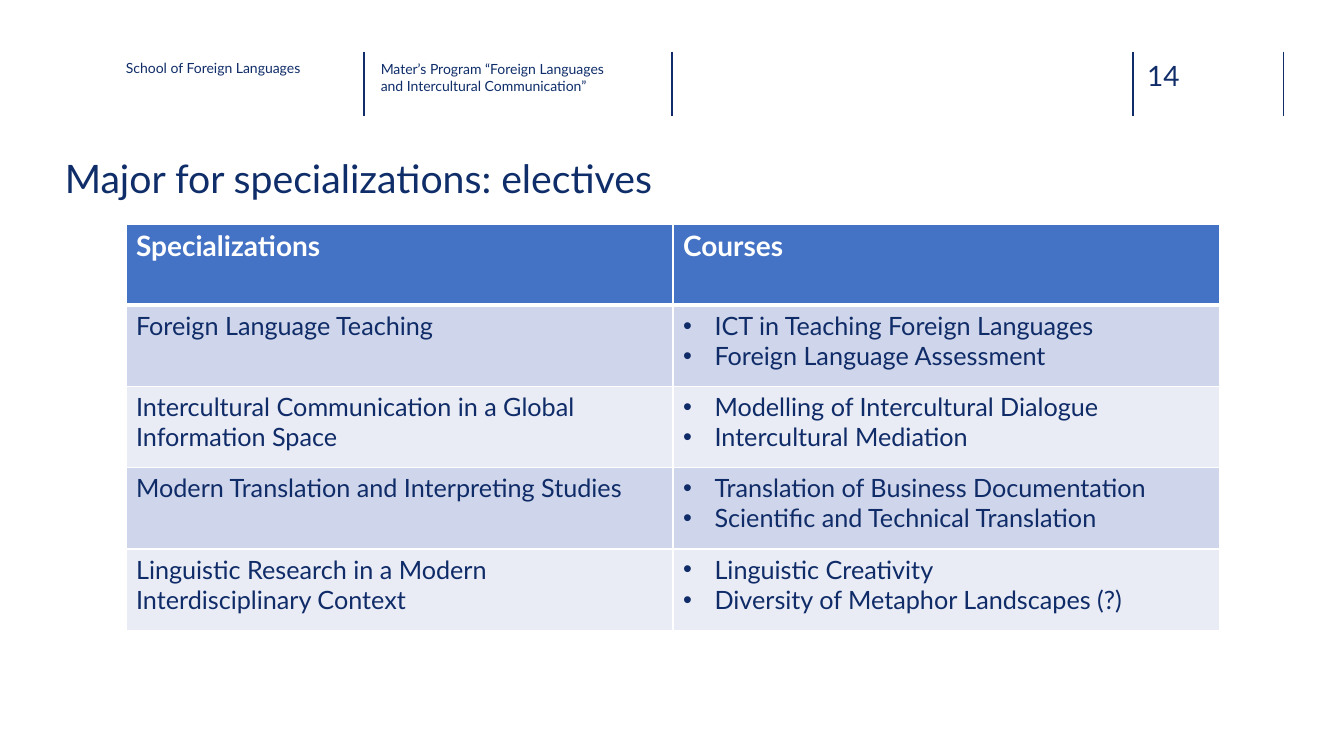
import pptx
import pptx.dml.color
import pptx.enum.shapes
import pptx.oxml
import pptx.oxml.ns
import pptx.util
from pptx.util import Pt

FONT = "Lato"
NAVY, LABEL_NAVY, TITLE_NAVY = "102D69", "0F2C68", "0E2D69"
WHITE, HEADER_BLUE = "FFFFFF", "4472C4"
BANDS = ("CFD5EA", "E9EBF5")
BULLET_INDENT = 22.5

HEADINGS = ("Specializations", "Courses")
ELECTIVES = [
    ("Foreign Language Teaching",
     ["ICT in Teaching Foreign Languages", "Foreign Language Assessment"]),
    ("Intercultural Communication in a Global Information Space",
     ["Modelling of Intercultural Dialogue", "Intercultural Mediation"]),
    ("Modern Translation and Interpreting Studies",
     ["Translation of Business Documentation", "Scientific and Technical Translation"]),
    ("Linguistic Research in a Modern Interdisciplinary Context",
     ["Linguistic Creativity", "Diversity of Metaphor Landscapes (?)"]),
]


def rgb(color):
    return pptx.dml.color.RGBColor.from_string(color)


def add_xml(parent, tag, content="", **attributes):
    attrs = "".join(f' {name}="{value}"' for name, value in attributes.items())
    xml = f'<a:{tag} {pptx.oxml.ns.nsdecls("a")}{attrs}>{content}</a:{tag}>'
    parent.append(pptx.oxml.parse_xml(xml))


def style(p, size, color, bold=False):
    p.font.name = FONT
    p.font.size = Pt(size)
    p.font.bold = bold
    p.font.color.rgb = rgb(color)


def add_text(s, left, top, width, height, text, size, color, spacing=None):
    tf = s.shapes.add_textbox(Pt(left), Pt(top), Pt(width), Pt(height)).text_frame
    tf.margin_left = tf.margin_top = tf.margin_right = tf.margin_bottom = 0
    tf.word_wrap = True
    p = tf.paragraphs[0]
    p.text = text
    p.line_spacing = spacing
    style(p, size, color)


def add_divider(s, x, top, height):
    line = s.shapes.add_connector(pptx.enum.shapes.MSO_CONNECTOR.STRAIGHT,
                                  Pt(x), Pt(top), Pt(x), Pt(top + height))
    line.line.color.rgb = rgb(NAVY)
    line.line.width = Pt(1)
    add_xml(line._element.spPr, "effectLst")


def add_header(s, left, top, width, height):
    """Place the school, the program and the page number between dividers."""
    for offset in (170, 390, 719.3, 826.6):
        add_divider(s, left + offset, top, height)
    add_text(s, left, top + 5.7, 150, 32.4, "School of Foreign Languages", 10, LABEL_NAVY)
    add_text(s, left + 182, top + 6.4, 163, 32.4,
             "Mater’s Program “Foreign Languages and Intercultural Communication”",
             10, TITLE_NAVY)
    add_text(s, left + 729.4, top + 5, 52.6, 24.5, "14", 20, NAVY)


def fill_cell(cell, lines, size, color, fill, bold=False, bulleted=False):
    tf = cell.text_frame
    tf.text = "\n".join(lines)
    for p in tf.paragraphs:
        if bulleted:
            pPr = p._p.get_or_add_pPr()
            indent = Pt(BULLET_INDENT)
            pPr.set("marL", str(indent))
            pPr.set("indent", str(-indent))
            add_xml(pPr, "buFont", typeface="Arial")
            add_xml(pPr, "buChar", char="•")
        style(p, size, color, bold)
    cell.fill.solid()
    cell.fill.fore_color.rgb = rgb(fill)


def add_borders(cell, top, bottom):
    stroke = f'<a:solidFill><a:srgbClr val="{WHITE}"/></a:solidFill>'
    for tag, width in (("lnL", 1), ("lnR", 1), ("lnT", top), ("lnB", bottom)):
        add_xml(cell._tc.get_or_add_tcPr(), tag, stroke, w=Pt(width))


def add_electives_table(s, left, top, width, height):
    rows = len(ELECTIVES) + 1
    table = s.shapes.add_table(rows, 2, Pt(left), Pt(top), Pt(width), Pt(height)).table
    for column in table.columns:
        column.width = Pt(width / 2)
    for i, row in enumerate(table.rows):
        row.height = Pt(height / rows)
        for cell in row.cells:
            add_borders(cell, 3 if i == 1 else 1, 3 if i == 0 else 1)
    for j, heading in enumerate(HEADINGS):
        fill_cell(table.cell(0, j), [heading], 20, WHITE, HEADER_BLUE, bold=True)
    for i, (specialization, courses) in enumerate(ELECTIVES):
        band = BANDS[i % 2]
        fill_cell(table.cell(i + 1, 0), [specialization], 18, LABEL_NAVY, band)
        fill_cell(table.cell(i + 1, 1), courses, 18, LABEL_NAVY, band, bulleted=True)


def main():
    prs = pptx.Presentation()
    prs.slide_width, prs.slide_height = Pt(960), Pt(540)
    s = prs.slides.add_slide(prs.slide_layouts[6])
    add_header(s, 90, 36.8, 826.6, 46)
    add_text(s, 46.3, 113.8, 870.3, 35.3, "Major for specializations: electives",
             28, TITLE_NAVY, spacing=0.9)
    add_electives_table(s, 90, 160, 781.4, 290.3)
    prs.save("out.pptx")


if __name__ == "__main__":
    main()
